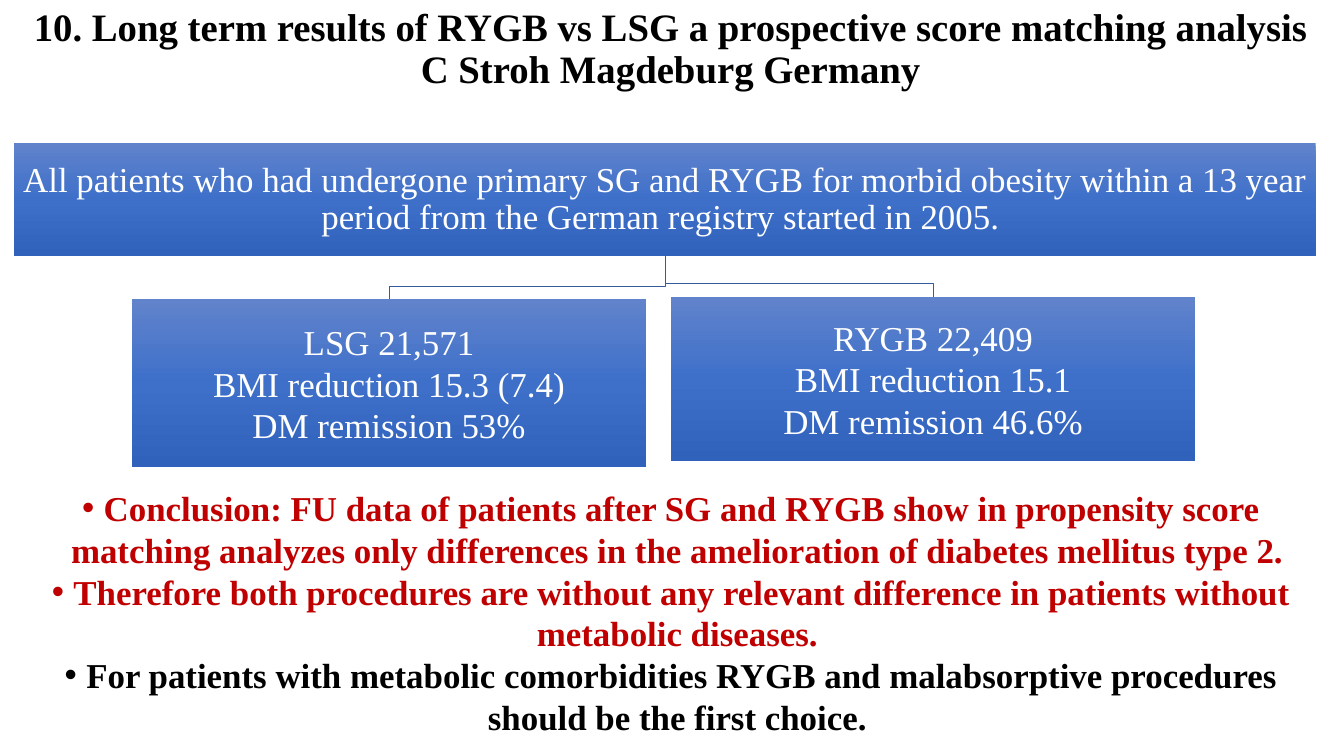
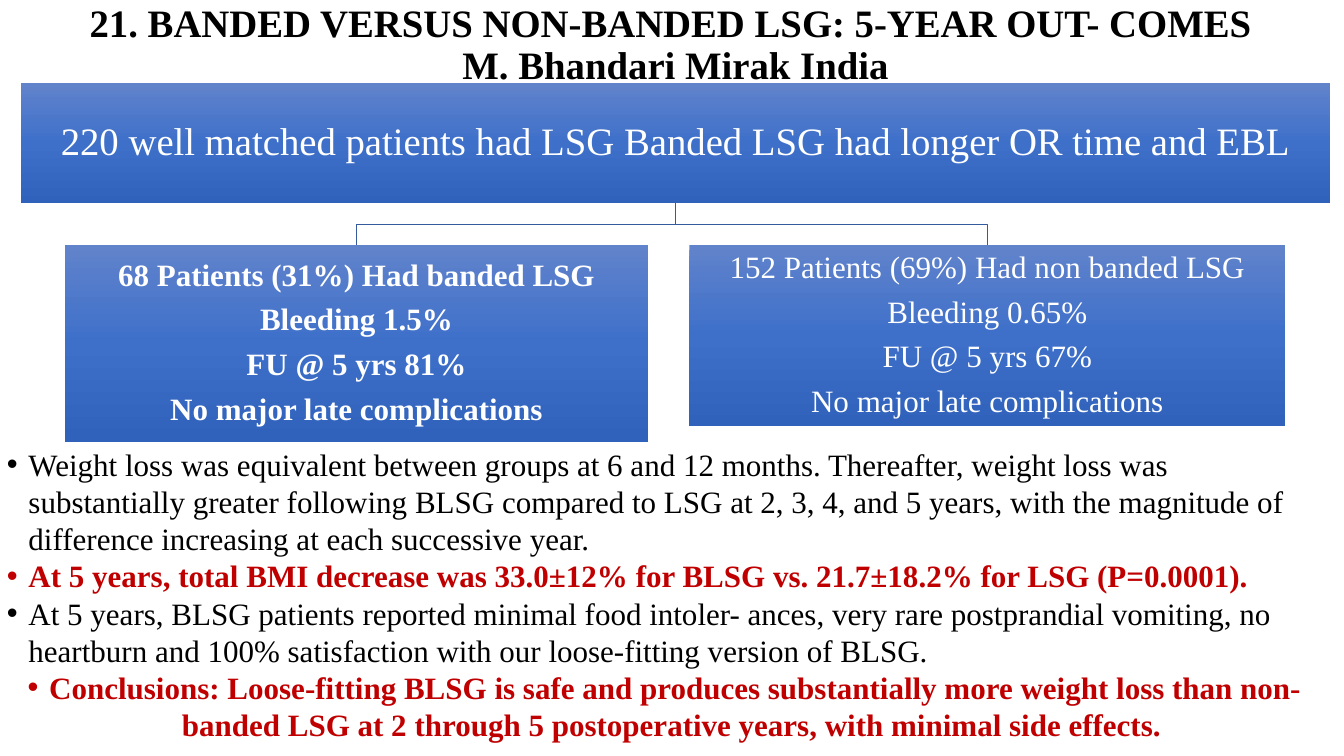
from copy import deepcopy
from lxml.etree import SubElement
from pptx import Presentation
from pptx.dml.color import RGBColor
from pptx.enum.shapes import MSO_SHAPE
from pptx.enum.text import MSO_ANCHOR, PP_ALIGN
from pptx.oxml.ns import qn
from pptx.util import Inches, Pt

WIDE, HIGH = Inches(19.26), Inches(10.83)
FACE = "Times New Roman"
BLACK, WHITE, RED, LINE = "000000", "FFFFFF", "C00000", "365B9D"
SHADES = ("6183CB", "3E70CA", "3062BB")
HANG = Inches(0.31)


def paint(color, code):
    color.rgb = RGBColor.from_string(code)


def place(left, top, width, height):
    return (round(WIDE * left / 100), round(HIGH * top / 100),
            round(WIDE * width / 100), round(HIGH * height / 100))


def setup(frame, anchor, side=0.1, edge=0.05):
    frame.word_wrap = True
    frame.vertical_anchor = anchor
    frame.margin_left = frame.margin_right = Inches(side)
    frame.margin_top = frame.margin_bottom = Inches(edge)


def style(para, size, code, bold=False, align=PP_ALIGN.CENTER, pitch=1.0, after=0):
    para.alignment = align
    para.line_spacing = pitch
    para.space_after = Pt(after)
    font = para.font
    font.name, font.size, font.bold = FACE, Pt(size), bold
    paint(font.color, code)


def lines(frame, texts):
    for index, text in enumerate(texts):
        para = frame.paragraphs[0] if index == 0 else frame.add_paragraph()
        para.text = text
        yield para


def title(slide, area, text):
    frame = slide.shapes.add_textbox(*place(*area)).text_frame
    setup(frame, MSO_ANCHOR.MIDDLE)
    for para in lines(frame, [text]):
        style(para, 40, BLACK, True, pitch=0.9)


def shade(shape):
    fill = shape.fill
    fill.gradient()
    fill.gradient_angle = 270
    first = next(shape._element.spPr.iter(qn("a:gs")))
    first.addnext(deepcopy(first))
    for index, (stop, code) in enumerate(zip(fill.gradient_stops, SHADES)):
        stop.position = index / 2
        paint(stop.color, code)


def box(slide, area, texts, size, bold=False, pitch=0.9, after=0):
    shape = slide.shapes.add_shape(MSO_SHAPE.RECTANGLE, *place(*area))
    shape.shadow.inherit = False
    shape.line.fill.background()
    shade(shape)
    setup(shape.text_frame, MSO_ANCHOR.MIDDLE, 0.03, 0.03)
    for para in lines(shape.text_frame, texts):
        style(para, size, WHITE, bold, pitch=pitch, after=after)
    return shape


def tree(slide, root, kids, gap):
    drop = round(HIGH * gap / 100)
    mid = root.left + root.width // 2
    base = root.top + root.height
    for kid in kids:
        bend = kid.top - drop
        x = kid.left + kid.width // 2
        pen = slide.shapes.build_freeform(mid, base)
        pen.add_line_segments([(mid, bend), (x, bend), (x, kid.top)], close=False)
        elbow = pen.convert_to_shape()
        elbow.shadow.inherit = False
        elbow.fill.background()
        elbow.line.width = Pt(0.5)
        paint(elbow.line.color, LINE)


def bullet(para):
    props = para._p.get_or_add_pPr()
    props.set("marL", str(HANG))
    props.set("indent", str(-HANG))
    SubElement(props, qn("a:buFont")).set("typeface", "Arial")
    SubElement(props, qn("a:buChar")).set("char", "•")


def notes(slide, area, size, items):
    frame = slide.shapes.add_textbox(*place(*area)).text_frame
    setup(frame, MSO_ANCHOR.TOP)
    looks = [item[1:] for item in items]
    for para, (code, bold, align) in zip(lines(frame, [item[0] for item in items]), looks):
        bullet(para)
        style(para, size, code, bold, align)


def score(slide):
    title(slide, (1.14, 0, 97.51, 13.3),
          "10. Long term results of RYGB vs LSG a prospective score matching analysis\n"
          "C Stroh Magdeburg Germany")
    root = box(slide, (1.04, 18.93, 96.85, 14.96),
               ["All patients who had undergone primary SG and RYGB for morbid obesity "
                "within a 13 year period from the German registry started in 2005. "], 36)
    kids = [
        box(slide, (9.81, 39.61, 38.27, 22.14),
            ["LSG 21,571", "BMI reduction 15.3 (7.4)", "DM remission 53%"], 36, pitch=1.0),
        box(slide, (49.9, 39.24, 39.04, 21.77),
            ["RYGB 22,409", "BMI reduction 15.1", "DM remission 46.6%"], 36, pitch=1.0),
    ]
    tree(slide, root, kids, 1.75)
    mid = PP_ALIGN.CENTER
    notes(slide, (0.83, 63.88, 98.18, 34.53), 36, [
        ("Conclusion: FU data of patients after SG and RYGB show in propensity score "
         "matching analyzes only differences in the amelioration of diabetes mellitus type 2. ",
         RED, True, mid),
        ("Therefore both procedures are without any relevant difference in patients "
         "without metabolic diseases. ", RED, True, mid),
        ("For patients with metabolic comorbidities RYGB and malabsorptive procedures "
         "should be the first choice. ", BLACK, True, mid),
    ])


def banded(slide):
    title(slide, (1.56, 1.25, 97.4, 9.7),
          "21. BANDED VERSUS NON-BANDED LSG: 5-YEAR OUT- COMES \nM. Bhandari Mirak India")
    root = box(slide, (1.56, 10.99, 97.4, 15.93),
               ["220 well matched patients had LSG Banded LSG had longer OR time and EBL"], 40)
    kids = [
        box(slide, (4.83, 32.41, 43.41, 26),
            ["68 Patients (31%) Had banded LSG", "Bleeding 1.5%", "FU @ 5 yrs 81%",
             "No major late complications"], 32, True, after=11.5),
        box(slide, (51.3, 32.41, 44.34, 23.97),
            ["152 Patients (69%) Had non banded LSG", "Bleeding 0.65%", "FU @ 5 yrs 67%",
             "No major late complications"], 32, after=11.5),
    ]
    tree(slide, root, kids, 2.77)
    left, mid = PP_ALIGN.LEFT, PP_ALIGN.CENTER
    notes(slide, (0, 58.42, 98.96, 41.37), 32, [
        ("Weight loss was equivalent between groups at 6 and 12 months. Thereafter, weight "
         "loss was substantially greater following BLSG compared to LSG at 2, 3, 4, and "
         "5 years, with the magnitude of difference increasing at each successive year.",
         BLACK, False, left),
        ("At 5 years, total BMI decrease was 33.0±12% for BLSG vs. 21.7±18.2% for LSG "
         "(P=0.0001).", RED, True, left),
        ("At 5 years, BLSG patients reported minimal food intoler- ances, very rare "
         "postprandial vomiting, no heartburn and 100% satisfaction with our loose-fitting "
         "version of BLSG.", BLACK, False, left),
        ("Conclusions: Loose-fitting BLSG is safe and produces substantially more weight "
         "loss than non-banded LSG at 2 through 5 postoperative years, with minimal side "
         "effects. ", RED, True, mid),
    ])


def main():
    deck = Presentation()
    deck.slide_width, deck.slide_height = WIDE, HIGH
    for build in (score, banded):
        build(deck.slides.add_slide(deck.slide_layouts[6]))
    deck.save("out.pptx")


if __name__ == "__main__":
    main()
